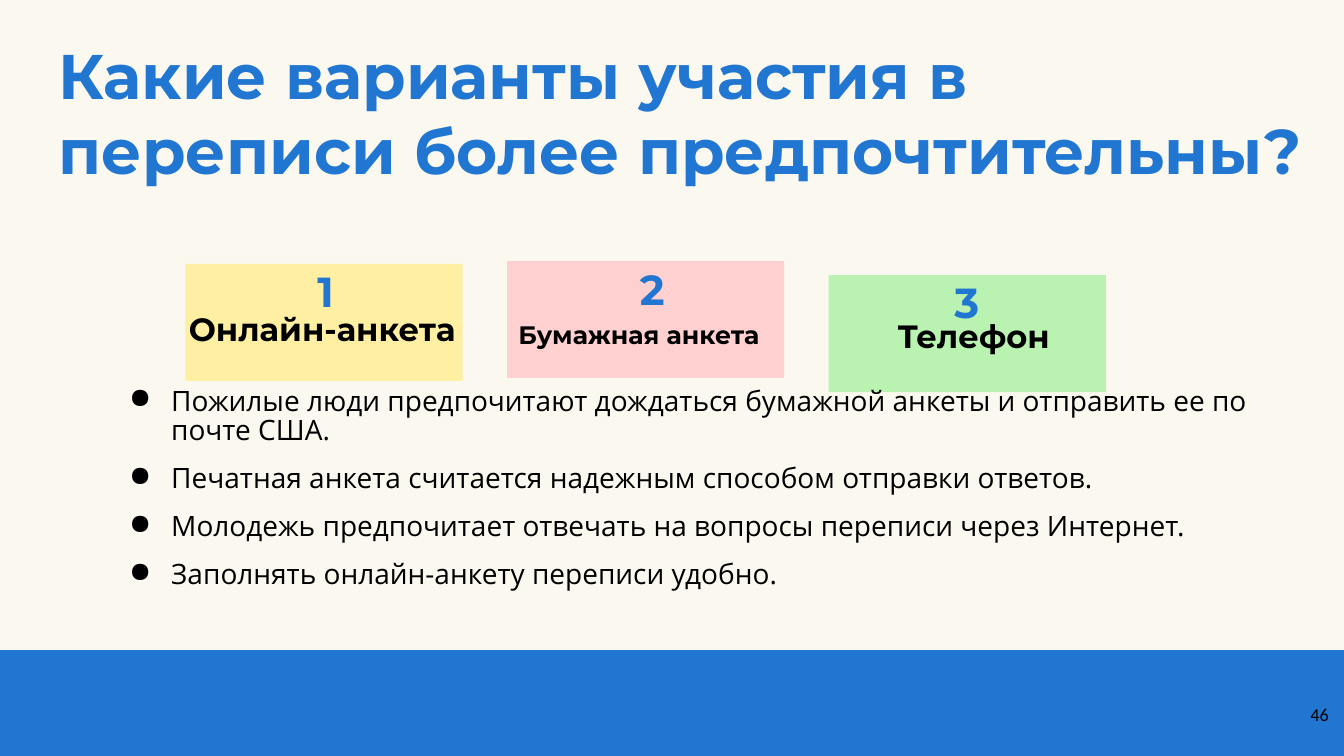
from lxml.etree import SubElement
from pptx import Presentation
from pptx.dml.color import RGBColor
from pptx.enum.shapes import MSO_SHAPE
from pptx.enum.text import PP_ALIGN
from pptx.oxml.ns import qn
from pptx.util import Pt

CREAM = RGBColor(0xFB, 0xF9, 0xEF)
BLUE = RGBColor(0x21, 0x76, 0xD2)
BLACK = RGBColor(0, 0, 0)
YELLOW = RGBColor(0xFF, 0xEF, 0xA2)
PINK = RGBColor(0xFE, 0xD0, 0xD0)
GREEN = RGBColor(0xB9, 0xF2, 0xB1)

TITLE = {"name": "Montserrat", "size": Pt(45), "bold": True}
NUMBER = {"name": "Montserrat", "size": Pt(30), "bold": True}
CAPTION = {"name": "Montserrat", "size": Pt(23), "bold": True}
SMALL_CAPTION = {**CAPTION, "size": Pt(18)}
BODY = {"name": "Open Sans", "size": Pt(20)}
PAGE = {"name": "Calibri", "size": Pt(13)}

# Card top, colour, number position, caption position, caption, caption format
CARDS = [
    (188.6, YELLOW, (219.6, 186.5), (102.2, 217.4), "Онлайн-анкета", CAPTION),
    (186.5, PINK, (450, 185), (328.3, 224.6), "Бумажная анкета", SMALL_CAPTION),
    (196.6, GREEN, (674.6, 193.7), (567.4, 222.5), "Телефон", CAPTION),
]
CARD_LEFT, CARD_STEP = 132.5, 229.7

REASONS = [
    "Пожилые люди предпочитают дождаться бумажной анкеты и отправить ее по почте США.",
    "Печатная анкета считается надежным способом отправки ответов.",
    "Молодежь предпочитает отвечать на вопросы переписи через Интернет.",
    "Заполнять онлайн-анкету переписи удобно.",
]


def add_block(slide, left, top, width, height, color):
    shape = slide.shapes.add_shape(
        MSO_SHAPE.RECTANGLE, Pt(left), Pt(top), Pt(width), Pt(height))
    shape.shadow.inherit = False
    shape.fill.solid()
    shape.fill.fore_color.rgb = color
    shape.line.fill.background()


def style_paragraph(paragraph, text, font_format, color, **layout):
    paragraph.text = text
    for name, value in layout.items():
        setattr(paragraph, name, value)
    font = paragraph.runs[0].font
    for name, value in font_format.items():
        setattr(font, name, value)
    font.color.rgb = color


def add_frame(slide, left, top, width, height):
    box = slide.shapes.add_textbox(Pt(left), Pt(top), Pt(width), Pt(height))
    box.text_frame.word_wrap = True
    return box.text_frame


def add_text(slide, place, text, font_format, color, **layout):
    frame = add_frame(slide, *place)
    style_paragraph(frame.paragraphs[0], text, font_format, color, **layout)
    return frame


def add_bullet(paragraph):
    properties = paragraph._p.get_or_add_pPr()
    properties.set("marL", str(Pt(36)))
    properties.set("indent", str(Pt(-30)))
    bullet_color = SubElement(properties, qn("a:buClr"))
    SubElement(bullet_color, qn("a:srgbClr")).set("val", str(BLACK))
    SubElement(properties, qn("a:buChar")).set("char", "●")


def add_bullet_list(slide, place, items):
    frame = add_frame(slide, *place)
    frame.margin_top = Pt(5.5)
    for index, item in enumerate(items):
        paragraph = frame.add_paragraph() if index else frame.paragraphs[0]
        add_bullet(paragraph)
        style_paragraph(paragraph, item, BODY, BLACK, line_spacing=0.87,
                        space_before=Pt(13.5 if index else 0))


def main():
    presentation = Presentation()
    presentation.slide_width, presentation.slide_height = Pt(960), Pt(540)
    slide = presentation.slides.add_slide(presentation.slide_layouts[6])
    slide.background.fill.solid()
    slide.background.fill.fore_color.rgb = CREAM

    # Footer band and page number
    add_block(slide, 0, 464.4, 960, 75.6, BLUE)
    add_text(slide, (898.6, 499, 57.6, 41), "46", PAGE, BLACK,
             alignment=PP_ALIGN.RIGHT)

    # Title
    title = add_text(slide, (34.6, 23, 902.2, 181.4),
                     "Какие варианты участия в переписи более предпочтительны?",
                     TITLE, BLUE, line_spacing=0.98)
    title.margin_top, title.margin_right = Pt(6), Pt(0)

    # Numbered cards
    for index, (top, color, number_at, caption_at, caption, style) in enumerate(CARDS):
        add_block(slide, CARD_LEFT + index * CARD_STEP, top, 198, 83.5, color)
        add_text(slide, (*caption_at, 256.3, 46), caption, style, BLACK,
                 alignment=PP_ALIGN.CENTER)
        add_text(slide, (*number_at, 37.4, 44), str(index + 1), NUMBER, BLUE)

    # Reasons
    add_bullet_list(slide, (79.2, 271.4, 838, 190.8), REASONS)

    presentation.save("out.pptx")


if __name__ == "__main__":
    main()
